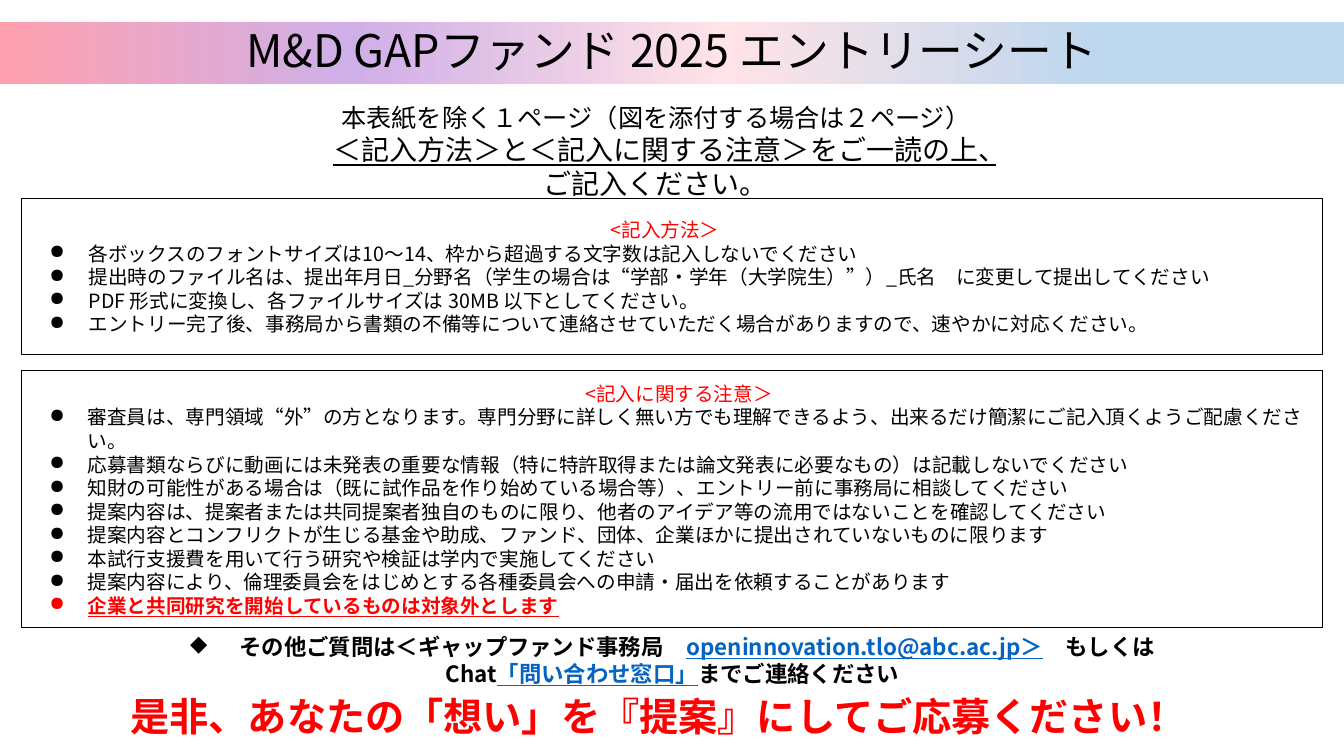
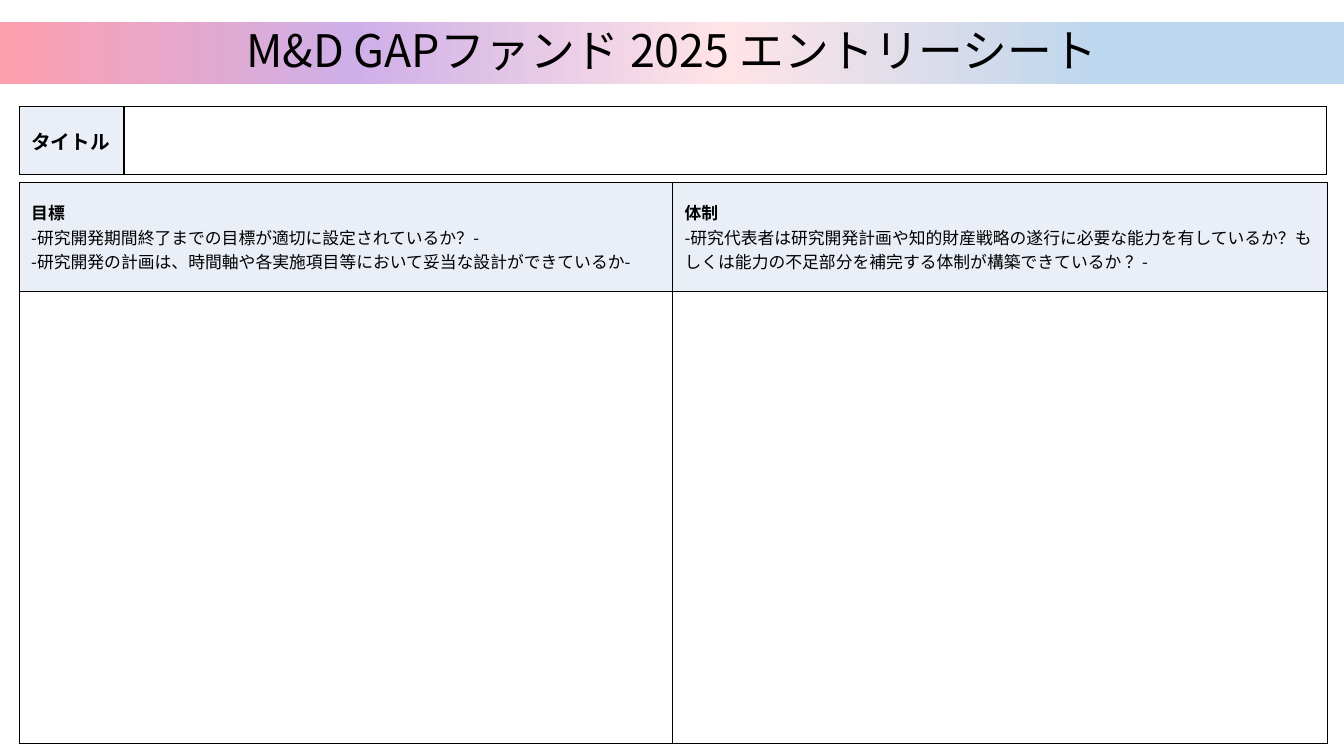
from dataclasses import dataclass

from lxml import etree
from pptx import Presentation
from pptx.dml.color import RGBColor
from pptx.enum.shapes import MSO_SHAPE
from pptx.enum.text import MSO_ANCHOR, MSO_AUTO_SIZE, PP_ALIGN
from pptx.oxml.ns import qn
from pptx.util import Inches, Pt

RECTANGLE = MSO_SHAPE.RECTANGLE
LEFT, CENTER = PP_ALIGN.LEFT, PP_ALIGN.CENTER
TOP, MIDDLE = MSO_ANCHOR.TOP, MSO_ANCHOR.MIDDLE
GROW = MSO_AUTO_SIZE.SHAPE_TO_FIT_TEXT


@dataclass(frozen=True)
class Theme:
    font: str = "Noto Sans CJK JP"
    ink: str = "000000"
    alert: str = "FF0000"
    link: str = "0563C1"
    label_fill: str = "EAEEF6"
    band: tuple = ((0, "FFA0AF"), (26, "CFAFE7"), (54, "FFE3E7"), (82, "BDD7EE"))
    title: int = 32
    appeal: int = 28
    lead: int = 20
    sublead: int = 18
    contact: int = 16
    body: int = 14
    small: int = 12
    box_line: float = 0.75
    cell_line: float = 1


THEME = Theme()
PAGE_WIDTH, PAGE_HEIGHT = 13.33, 7.5
TITLE = "M&D GAPファンド 2025 エントリーシート"

METHOD = [
    "各ボックスのフォントサイズは10～14、枠から超過する文字数は記入しないでください",
    "提出時のファイル名は、提出年月日_分野名（学生の場合は“学部・学年（大学院生）”）_氏名　に変更して提出してください",
    "PDF 形式に変換し、各ファイルサイズは 30MB 以下としてください。",
    "エントリー完了後、事務局から書類の不備等について連絡させていただく場合がありますので、速やかに対応ください。",
]
CAUTIONS = [
    "審査員は、専門領域“外”の方となります。専門分野に詳しく無い方でも理解できるよう、出来るだけ簡潔にご記入頂くようご配慮ください。　",
    "応募書類ならびに動画には未発表の重要な情報（特に特許取得または論文発表に必要なもの）は記載しないでください",
    "知財の可能性がある場合は（既に試作品を作り始めている場合等）、エントリー前に事務局に相談してください",
    "提案内容は、提案者または共同提案者独自のものに限り、他者のアイデア等の流用ではないことを確認してください",
    "提案内容とコンフリクトが生じる基金や助成、ファンド、団体、企業ほかに提出されていないものに限ります",
    "本試行支援費を用いて行う研究や検証は学内で実施してください",
    "提案内容により、倫理委員会をはじめとする各種委員会への申請・届出を依頼することがあります",
]
EXCLUSION = "企業と共同研究を開始しているものは対象外とします"
GOAL = [
    "-研究開発期間終了までの目標が適切に設定されているか？-",
    "-研究開発の計画は、時間軸や各実施項目等において妥当な設計ができているか-",
]
TEAM = [
    "-研究代表者は研究開発計画や知的財産戦略の遂行に必要な能力を有しているか？もしくは能力の不足部分を補完する体制が構築できているか ？-",
]


def add_span(para, text, size=THEME.body, color=THEME.ink, bold=False, underline=False):
    span = para.add_run()
    span.text = text
    font = span.font
    font.name, font.size, font.bold, font.underline = THEME.font, Pt(size), bold, underline
    font.color.rgb = RGBColor.from_string(color)
    etree.SubElement(span._r.rPr, qn("a:ea"), typeface=THEME.font)


def add_para(frame, text, align=LEFT, spacing=None, bullet=None, indent=0, **style):
    """Add a paragraph; text is a string or a list of (text, style) spans."""
    first = frame.paragraphs[0]
    para = frame.add_paragraph() if first.runs else first
    para.alignment = align
    if spacing:
        para.line_spacing = spacing
    if bullet:
        properties = para._p.get_or_add_pPr()
        properties.set("marL", str(Inches(indent)))
        properties.set("indent", str(Inches(-indent)))
        etree.SubElement(properties, qn("a:buChar"), char=bullet)
    for words, changes in [(text, {})] if isinstance(text, str) else text:
        add_span(para, words, **{**style, **changes})


def set_margins(target, left, top, right, bottom):
    target.margin_left, target.margin_top = Inches(left), Inches(top)
    target.margin_right, target.margin_bottom = Inches(right), Inches(bottom)


def add_text_box(page, box, wrap=True, grow=False):
    frame = page.shapes.add_textbox(*map(Inches, box)).text_frame
    frame.word_wrap = wrap
    if grow:
        frame.auto_size = GROW
    return frame


def add_rectangle(page, box):
    shape = page.shapes.add_shape(RECTANGLE, *map(Inches, box))
    shape.shadow.inherit = False
    shape.fill.background()
    shape.line.fill.background()
    shape.text_frame.word_wrap = True
    shape.text_frame.vertical_anchor = MIDDLE
    return shape


def add_title_band(page, box):
    band = add_rectangle(page, box)
    band.fill.gradient()
    band.fill.gradient_angle = 0
    stops = band._element.spPr.find(".//" + qn("a:gsLst"))
    for stop in list(stops):
        stops.remove(stop)
    for percent, color in THEME.band:
        stop = etree.SubElement(stops, qn("a:gs"), pos=str(percent * 1000))
        etree.SubElement(stop, qn("a:srgbClr"), val=color)
    add_para(band.text_frame, TITLE, align=CENTER, spacing=0.9, size=THEME.title)


def add_rules_box(page, box, heading, rules, indent):
    """Outlined box with a red heading and bulleted rules; returns its text frame."""
    shape = add_rectangle(page, box)
    shape.line.color.rgb = RGBColor.from_string(THEME.ink)
    shape.line.width = Pt(THEME.box_line)
    frame = shape.text_frame
    set_margins(frame, 0.28, 0.05, 0, 0.05)
    add_para(frame, heading, align=CENTER, color=THEME.alert)
    for rule in rules:
        add_para(frame, rule, bullet="●", indent=indent)
    return frame


def add_lead(page, box):
    frame = add_text_box(page, box, wrap=False)
    add_para(frame, "本表紙を除く１ページ（図を添付する場合は２ページ）",
             align=CENTER, size=THEME.sublead)
    add_para(frame, "＜記入方法＞と＜記入に関する注意＞をご一読の上、ご記入ください。",
             align=CENTER, size=THEME.lead, underline=True)


def add_contact(page, box):
    frame = add_text_box(page, box, grow=True)
    link = {"color": THEME.link, "underline": True}
    style = {"align": CENTER, "size": THEME.contact, "bold": True}
    add_para(frame, [("その他ご質問は＜ギャップファンド事務局　", {}),
                     ("openinnovation.tlo@abc.ac.jp＞", link),
                     ("　もしくは", {})], bullet="◆", indent=0.49, **style)
    add_para(frame, [("Chat", {}), ("「問い合わせ窓口」", link),
                     ("までご連絡ください", {})], **style)


def add_appeal(page, box):
    frame = add_text_box(page, box, grow=True)
    add_para(frame, "是非、あなたの「想い」を『提案』にしてご応募ください！　",
             align=CENTER, size=THEME.appeal, color=THEME.alert, bold=True)


def add_borders(cell):
    properties = cell._tc.get_or_add_tcPr()
    for side in ("lnL", "lnR", "lnT", "lnB"):
        line = etree.SubElement(properties, qn("a:" + side), w=str(Pt(THEME.cell_line)))
        fill = etree.SubElement(line, qn("a:solidFill"))
        etree.SubElement(fill, qn("a:srgbClr"), val=THEME.ink)


def add_form_table(page, left, top, widths, heights):
    """Table of empty bordered cells with the given column widths and row heights."""
    box = (left, top, sum(widths), sum(heights))
    table = page.shapes.add_table(len(heights), len(widths), *map(Inches, box)).table
    table.first_row = table.horz_banding = False
    for column, width in zip(table.columns, widths):
        column.width = Inches(width)
    for row, height in zip(table.rows, heights):
        row.height = Inches(height)
    for cell in table.iter_cells():
        add_borders(cell)
        cell.fill.background()
    return table


def fill_label(cell, label, questions=(), size=THEME.small):
    cell.fill.solid()
    cell.fill.fore_color.rgb = RGBColor.from_string(THEME.label_fill)
    cell.vertical_anchor = MIDDLE
    set_margins(cell, 0.12, 0.04, 0.04, 0.04)
    add_para(cell.text_frame, label, size=size, bold=True)
    for question in questions:
        add_para(cell.text_frame, question, size=size)


def add_page(deck):
    page = deck.slides.add_slide(deck.slide_layouts[6])
    add_title_band(page, (0, 0.22, PAGE_WIDTH, 0.61))
    return page


def build_cover(deck):
    page = add_page(deck)
    add_appeal(page, (0.76, 6.82, 11.93, 0.57))
    add_lead(page, (3.12, 0.97, 6.77, 0.66))
    add_rules_box(page, (0.21, 1.97, 12.91, 1.55), "<記入方法＞\t", METHOD, 0.39)
    cautions = add_rules_box(page, (0.21, 3.68, 12.91, 2.55),
                             "<記入に関する注意＞\t", CAUTIONS, 0.38)
    add_para(cautions, EXCLUSION, bullet="●", indent=0.38,
             color=THEME.alert, bold=True, underline=True)
    add_contact(page, (0.29, 6.23, 12.76, 0.64))


def build_entry_form(deck):
    page = add_page(deck)
    name_table = add_form_table(page, 0.19, 1.06, (1.04, 11.93), (0.67,))
    fill_label(name_table.cell(0, 0), "タイトル", size=THEME.body)
    plan_table = add_form_table(page, 0.19, 1.81, (6.48, 6.5), (1.08, 4.49))
    fill_label(plan_table.cell(0, 0), "目標", GOAL)
    fill_label(plan_table.cell(0, 1), "体制", TEAM)


def main():
    deck = Presentation()
    deck.slide_width, deck.slide_height = Inches(PAGE_WIDTH), Inches(PAGE_HEIGHT)
    build_cover(deck)
    build_entry_form(deck)
    deck.save("out.pptx")


if __name__ == "__main__":
    main()
